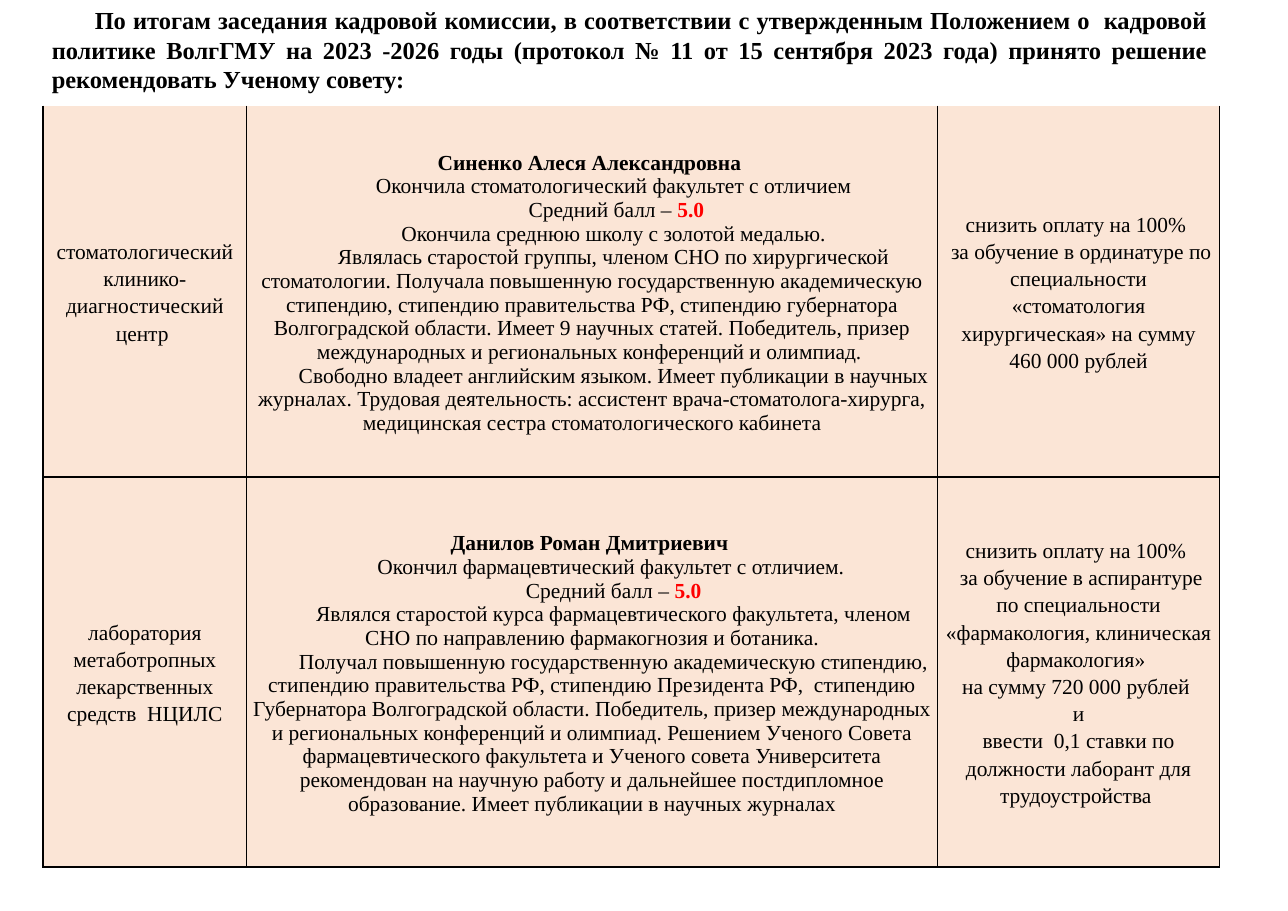
"""Slide with the personnel commission's recommendations to the academic council."""
from lxml import etree
from pptx import Presentation
from pptx.dml.color import RGBColor
from pptx.enum import text
from pptx.oxml import ns
from pptx.util import Inches, Pt

COLORS = {"ink": "000000", "score": "FF0000", "cell": "FBE5D6"}
FONT = "Times New Roman"
SCORE = "5.0"
INDENT = Inches(0.39)
COL_WIDTHS = [1.85, 6.27, 2.56]
ROW_HEIGHTS = [3.37, 3.54]

HEADING = (
    "По итогам заседания кадровой комиссии, в соответствии с утвержденным Положением о  кадровой "
    "политике ВолгГМУ на 2023 -2026 годы (протокол № 11 от 15 сентября 2023 года) принято решение "
    "рекомендовать Ученому совету:"
)
CANDIDATES = [
    (
        ["стоматологический клинико-диагностический центр "],
        [
            "Синенко Алеся Александровна ",
            "Окончила стоматологический факультет с отличием",
            " Средний балл – 5.0",
            "Окончила среднюю школу с золотой медалью.",
            "Являлась старостой группы, членом СНО по хирургической стоматологии. Получала повышенную "
            "государственную академическую стипендию, стипендию правительства РФ, стипендию губернатора "
            "Волгоградской области. Имеет 9 научных статей. Победитель, призер международных и "
            "региональных конференций и олимпиад. ",
            "Свободно владеет английским языком. Имеет публикации в научных журналах. Трудовая "
            "деятельность: ассистент врача-стоматолога-хирурга, медицинская сестра "
            "стоматологического кабинета",
        ],
        [
            "снизить оплату на 100% ",
            " за обучение в ординатуре по специальности «стоматология хирургическая» на сумму",
            "460 000 рублей",
        ],
    ),
    (
        ["лаборатория метаботропных лекарственных средств  НЦИЛС"],
        [
            "Данилов Роман Дмитриевич ",
            "Окончил фармацевтический факультет с отличием. ",
            "Средний балл – 5.0",
            "Являлся старостой курса фармацевтического факультета, членом СНО по направлению "
            "фармакогнозия и ботаника.",
            "Получал повышенную государственную академическую стипендию, стипендию правительства РФ, "
            "стипендию Президента РФ,  стипендию Губернатора Волгоградской области. Победитель, призер "
            "международных и региональных конференций и олимпиад. Решением Ученого Совета "
            "фармацевтического факультета и Ученого совета Университета рекомендован на научную работу "
            "и дальнейшее постдипломное образование. Имеет публикации в научных журналах",
        ],
        [
            "снизить оплату на 100% ",
            " за обучение в аспирантуре по специальности «фармакология, клиническая фармакология» ",
            "на сумму 720 000 рублей ",
            " и ",
            "ввести  0,1 ставки по должности лаборант для трудоустройства ",
        ],
    ),
]


def format_paragraph(p, size, align, bold=False, indent=0):
    p.alignment = align
    p.font.name, p.font.size, p.font.bold = FONT, Pt(size), bold
    p.font.color.rgb = RGBColor.from_string(COLORS["ink"])
    pPr = p._p.get_or_add_pPr()
    pPr.set("marL", "0")
    pPr.set("indent", str(indent))


def add_border(cell, side, visible):
    ln = etree.SubElement(cell._tc.get_or_add_tcPr(), ns.qn(f"a:ln{side}"), w=str(Pt(1)))
    if visible:
        fill = etree.SubElement(ln, ns.qn("a:solidFill"))
        etree.SubElement(fill, ns.qn("a:srgbClr"), val=COLORS["ink"])
    else:
        etree.SubElement(ln, ns.qn("a:noFill"))


prs = Presentation()
prs.slide_width, prs.slide_height = Inches(11.69), Inches(8.27)
s = prs.slides.add_slide(prs.slide_layouts[5])

title = s.shapes.title
title.left, title.top = Inches(0.37), Inches(0)
title.width, title.height = Inches(10.69), Inches(0.91)
tf = title.text_frame
tf.text = HEADING
tf.word_wrap = True
tf.auto_size = text.MSO_AUTO_SIZE.NONE
tf.vertical_anchor = text.MSO_ANCHOR.TOP
format_paragraph(tf.paragraphs[0], 16, text.PP_ALIGN.JUSTIFY, bold=True, indent=INDENT)

table = s.shapes.add_table(
    len(ROW_HEIGHTS), len(COL_WIDTHS), Inches(0.39), Inches(0.96),
    Inches(sum(COL_WIDTHS)), Inches(sum(ROW_HEIGHTS)),
).table
table.first_row = table.horz_banding = False
for column, width in zip(table.columns, COL_WIDTHS):
    column.width = Inches(width)
for row, height in zip(table.rows, ROW_HEIGHTS):
    row.height = Inches(height)

for i, candidate in enumerate(CANDIDATES):
    for j, lines in enumerate(candidate):
        cell = table.cell(i, j)
        cell.margin_left = cell.margin_right = Inches(0.05)
        cell.margin_top = cell.margin_bottom = 0
        cell.vertical_anchor = text.MSO_ANCHOR.MIDDLE
        for side in "LRTB":
            add_border(cell, side, visible=side != "T" or i > 0)
        cell.fill.solid()
        cell.fill.fore_color.rgb = RGBColor.from_string(COLORS["cell"])

        tf = cell.text_frame
        for k, line in enumerate(lines):
            p = tf.paragraphs[0] if k == 0 else tf.add_paragraph()
            biography = j == 1 and k > 0
            format_paragraph(p, 14, text.PP_ALIGN.CENTER, bold=j == 1 and k == 0,
                             indent=INDENT if biography else 0)
            if not biography:
                p.line_spacing = 1.15
            before, score, _ = line.partition(SCORE)
            p.add_run().text = before
            if score:
                r = p.add_run()
                r.text = score
                r.font.bold = True
                r.font.color.rgb = RGBColor.from_string(COLORS["score"])

prs.save("out.pptx")
